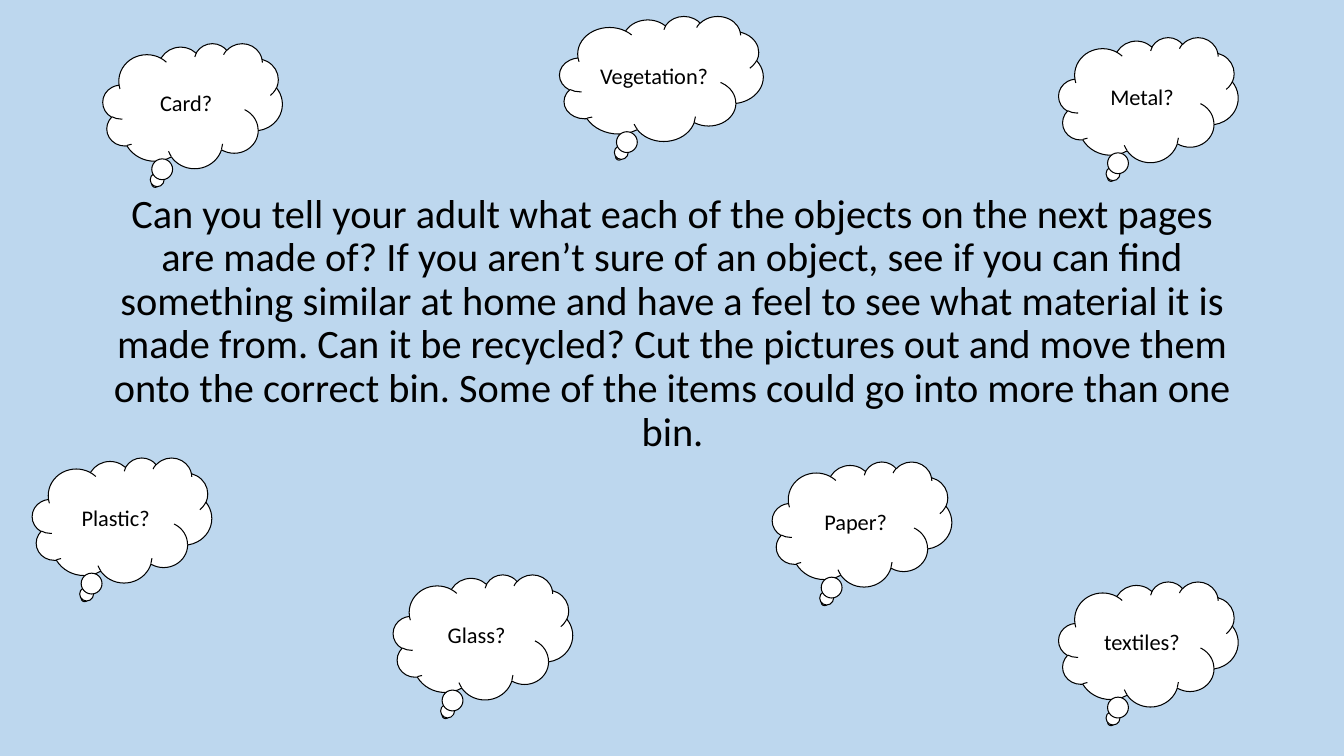
from pptx import Presentation
from pptx.dml.color import RGBColor
from pptx.enum.shapes import MSO_SHAPE
from pptx.enum.text import MSO_ANCHOR, PP_ALIGN
from pptx.util import Inches, Pt


def color(code):
    return RGBColor.from_string(code)


def write(frame, text, size=16, ink="000000", font="Calibri", space=1.0):
    frame.word_wrap = True
    frame.vertical_anchor = MSO_ANCHOR.MIDDLE
    para = frame.paragraphs[0]
    para.alignment = PP_ALIGN.CENTER
    para.line_spacing = space
    run = para.add_run()
    run.text = text
    run.font.size = Pt(size)
    run.font.name = font
    run.font.color.rgb = color(ink)


class Page:
    ink = "000000"
    paper = "FFFFFF"
    sky = "BDD7EE"

    def __init__(self, deck):
        self.slide = deck.slides.add_slide(deck.slide_layouts[6])
        fill = self.slide.background.fill
        fill.solid()
        fill.fore_color.rgb = color(self.sky)

    def title(self, text, left, top, width, height):
        box = self.slide.shapes.add_textbox(
            Inches(left), Inches(top), Inches(width), Inches(height))
        write(box.text_frame, text, size=28.8, ink=self.ink, space=0.9)

    def cloud(self, text, left, top, width=1.78, height=1.24):
        shape = self.slide.shapes.add_shape(
            MSO_SHAPE.CLOUD_CALLOUT,
            Inches(left), Inches(top), Inches(width), Inches(height))
        shape.shadow.inherit = False
        shape.fill.solid()
        shape.fill.fore_color.rgb = color(self.paper)
        shape.line.color.rgb = color(self.ink)
        shape.line.width = Pt(0.75)
        write(shape.text_frame, text, ink=self.ink)


def main():
    deck = Presentation()
    deck.slide_width = Inches(13.33)
    deck.slide_height = Inches(7.5)
    page = Page(deck)
    page.title(
        "Can you tell your adult what each of the objects on the next pages "
        "are made of? If you aren’t sure of an object, see if you can find "
        "something similar at home and have a feel to see what material it is "
        "made from. Can it be recycled? Cut the pictures out and move them "
        "onto the correct bin. Some of the items could go into more than one "
        "bin.", 0.92, 2.49, 11.5, 1.45)
    clouds = [
        ("Plastic?", 0.32, 4.54),
        ("Glass?", 3.9, 5.7),
        ("Paper?", 7.66, 4.58),
        ("Card?", 1.02, 0.43),
        ("Vegetation?", 5.55, 0.16, 2.02),
        ("Metal?", 10.5, 0.37),
        ("textiles?", 10.5, 5.77),
    ]
    for cloud in clouds:
        page.cloud(*cloud)
    deck.save("out.pptx")


if __name__ == "__main__":
    main()
